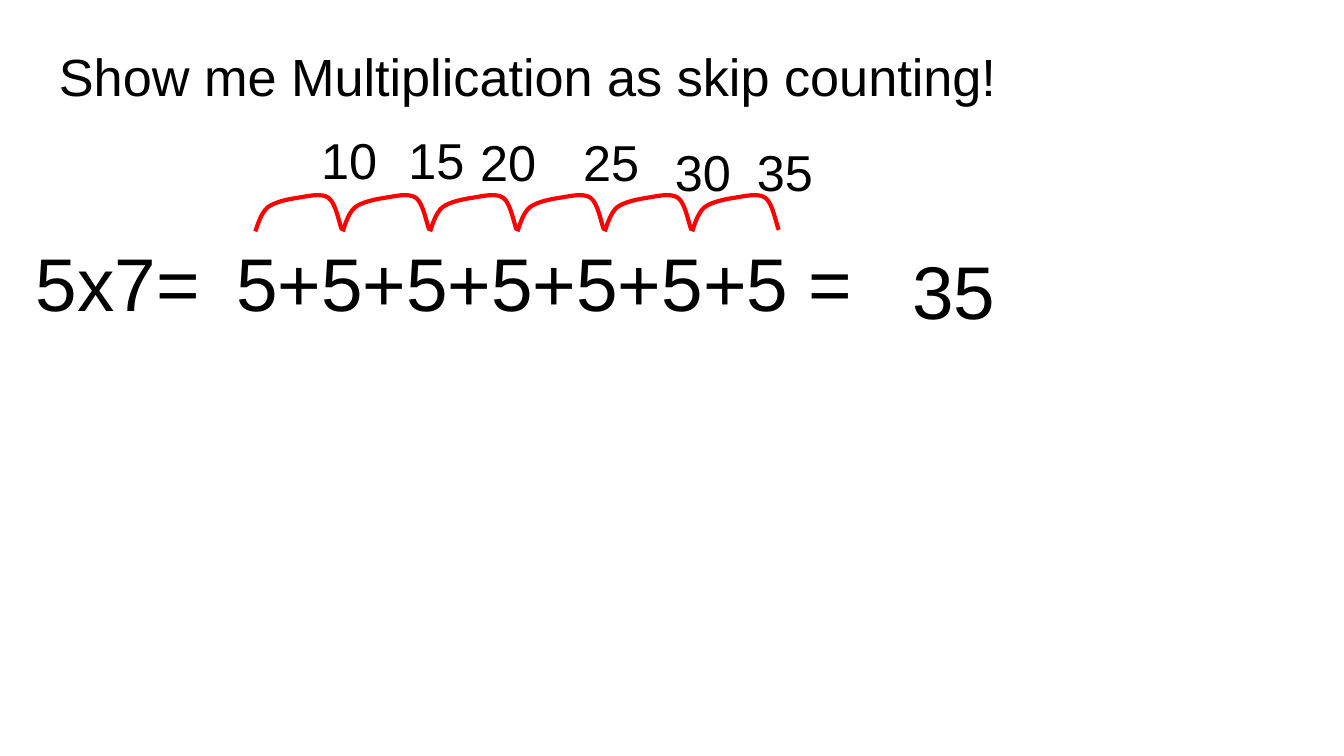
from pptx import Presentation
from pptx.dml.color import RGBColor
from pptx.enum.text import MSO_ANCHOR
from pptx.oxml.ns import qn
from pptx.oxml.xmlchemy import OxmlElement
from pptx.util import Pt

COLOURS = {"text": "000000", "hop": "FF0000"}
INSET = 7.2
HOP_START = (136.8, 124)
HOP_PITCH = 46.8
HOP_COUNT = 6
HOP_CURVES = [
    [(0.8, -2.2), (2.9, -10), (6.7, -13)],
    [(10.6, -15.8), (17.2, -17.2), (22.6, -18)],
    [(28, -18.8), (35.2, -20.8), (39.2, -18)],
    [(43.2, -15.2), (45, -3.8), (46.4, -0.8)],
]
COUNTS = [
    ("10", 164.9, 61.9, 46.8),
    ("15", 211.7, 61.9, 46.8),
    ("20", 250.1, 62.9, 54),
    ("25", 305.3, 62.9, 46.8),
    ("30", 354.5, 68.6, 54),
    ("35", 398.4, 68.6, 54),
]


def add_text(page, text, left, top, width, height, size):
    """Add one line of Arial text in a wrapping box."""
    box = page.shapes.add_textbox(Pt(left), Pt(top), Pt(width), Pt(height))
    frame = box.text_frame
    frame_format = {"word_wrap": True, "vertical_anchor": MSO_ANCHOR.TOP}
    for side in ("left", "top", "right", "bottom"):
        frame_format[f"margin_{side}"] = Pt(INSET)
    for name, value in frame_format.items():
        setattr(frame, name, value)
    span = frame.paragraphs[0].add_run()
    span.text = text
    for name, value in {"name": "Arial", "size": Pt(size)}.items():
        setattr(span.font, name, value)
    span.font.color.rgb = RGBColor.from_string(COLOURS["text"])


def bend_lines(shape):
    """Turn every three line segments of a freeform into one cubic curve."""
    lines = list(shape._element.iter(qn("a:lnTo")))
    for index in range(0, len(lines), 3):
        curve = OxmlElement("a:cubicBezTo")
        lines[index].addprevious(curve)
        for line in lines[index:index + 3]:
            curve.append(line[0])
            line.getparent().remove(line)


def add_hop(page, left, top):
    """Draw one open skip-counting hop."""
    builder = page.shapes.build_freeform(Pt(left), Pt(top))
    points = [(Pt(left + x), Pt(top + y)) for curve in HOP_CURVES for x, y in curve]
    builder.add_line_segments(points, close=False)
    hop = builder.convert_to_shape()
    bend_lines(hop)
    hop.shadow.inherit = False
    hop.fill.background()
    hop.line.color.rgb = RGBColor.from_string(COLOURS["hop"])
    hop.line.width = Pt(2.25)


def main():
    """Build the skip-counting slide."""
    deck = Presentation()
    deck.slide_width, deck.slide_height = Pt(720), Pt(405)
    page = deck.slides.add_slide(deck.slide_layouts[6])
    add_text(page, "Show me Multiplication as skip counting!", 24.5, 16.6, 671, 45.4, 28)
    add_text(page, "5x7=", 12.2, 119.5, 671, 269.3, 40)
    add_text(page, "5+5+5+5+5+5+5 =", 119.5, 119.5, 390.2, 59, 40)
    add_text(page, "35", 481.7, 123.8, 115.2, 109.4, 40)
    for index in range(HOP_COUNT):
        add_hop(page, HOP_START[0] + index * HOP_PITCH, HOP_START[1])
    for text, left, top, width in COUNTS:
        add_text(page, text, left, top, width, 45.4, 27)
    deck.save("out.pptx")


if __name__ == "__main__":
    main()
